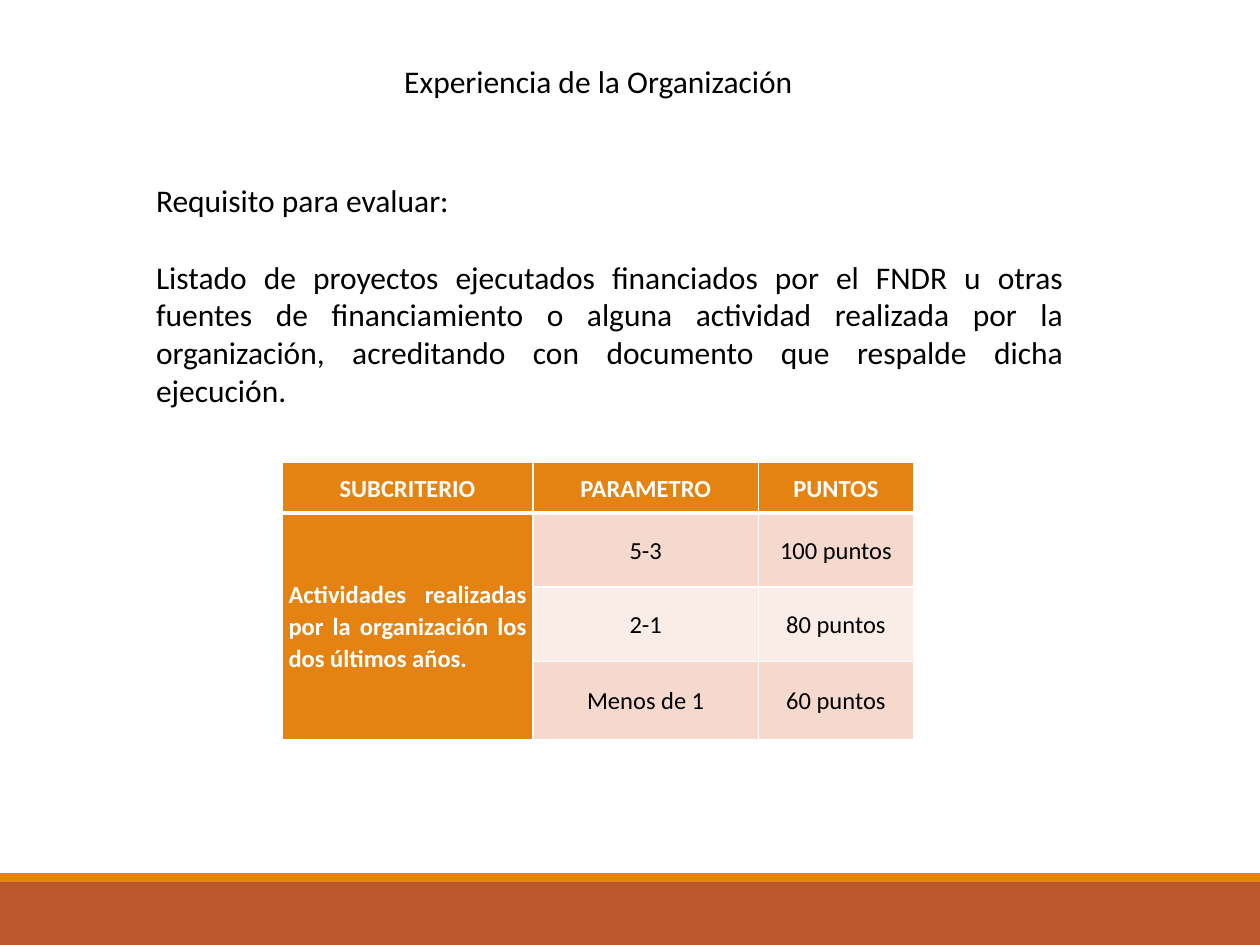
from lxml.etree import SubElement
from pptx import Presentation
from pptx.dml.color import RGBColor
from pptx.enum.shapes import MSO_SHAPE
from pptx.enum.text import MSO_ANCHOR, MSO_AUTO_SIZE, PP_ALIGN
from pptx.oxml.ns import qn
from pptx.util import Inches, Pt

WHITE = RGBColor(0xFF, 0xFF, 0xFF)
BLACK = RGBColor(0x00, 0x00, 0x00)
ORANGE = RGBColor(0xE4, 0x83, 0x12)
RUST = RGBColor(0xBD, 0x58, 0x2C)
PEACH = RGBColor(0xF5, 0xD9, 0xCC)
PALE = RGBColor(0xFA, 0xED, 0xE7)

SLIDE_SIZE = (10, 7.5)
COLUMN_WIDTHS = (1.99, 1.79, 1.23)
ROW_HEIGHTS = (0.4, 0.59, 0.59, 0.62)
BODY_FONT = {"size": Pt(18), "color": BLACK, "bold": False}
HEAD_FONT = {"size": Pt(14), "color": WHITE, "bold": True}
CELL_FONT = {"size": Pt(14), "color": BLACK, "bold": False}
CELL_MARGINS = {
    "margin_left": Inches(0.05), "margin_right": Inches(0.05),
    "margin_top": 0, "margin_bottom": 0,
    "vertical_anchor": MSO_ANCHOR.MIDDLE,
}

REQUIREMENT = (
    "Requisito para evaluar:",
    "Listado de proyectos ejecutados financiados por el FNDR u otras fuentes de "
    "financiamiento o alguna actividad realizada por la organización, acreditando "
    "con documento que respalde dicha ejecución.",
)
SCORES = (
    ("SUBCRITERIO", "PARAMETRO", "PUNTOS"),
    ("Actividades realizadas por la organización los dos últimos años.",
     "5-3", "100 puntos"),
    ("", "2-1", "80 puntos"),
    ("", "Menos de 1", "60 puntos"),
)


def apply_format(target, values):
    for name, value in values.items():
        setattr(target, name, value)


def write_paragraph(para, text, font, layout):
    apply_format(para, layout)
    span = para.add_run()
    span.text = text
    span.font.name = "Calibri"
    span.font.color.rgb = font["color"]
    apply_format(span.font, {key: font[key] for key in ("size", "bold")})


def add_band(page, top, height, color):
    """Add a bar across the full width of the slide."""
    band = page.shapes.add_shape(MSO_SHAPE.RECTANGLE, 0, Inches(top),
                                 Inches(SLIDE_SIZE[0]), Inches(height))
    band.shadow.inherit = False
    band.fill.solid()
    band.fill.fore_color.rgb = color
    band.line.fill.background()


def add_text(page, area, texts, layout, wrap=True):
    box = page.shapes.add_textbox(*map(Inches, area))
    frame = box.text_frame
    apply_format(frame, {"word_wrap": wrap,
                         "auto_size": MSO_AUTO_SIZE.SHAPE_TO_FIT_TEXT})
    for index, text in enumerate(texts):
        para = frame.add_paragraph() if index else frame.paragraphs[0]
        write_paragraph(para, text, BODY_FONT, layout)
        if index < len(texts) - 1:
            para.space_after = Pt(22)


def set_borders(cell, widths):
    """Draw white cell edges; widths maps a side (L, R, T, B) to points."""
    properties = cell._tc.get_or_add_tcPr()
    for index, (side, width) in enumerate(widths.items()):
        line = SubElement(properties, qn(f"a:ln{side}"), w=str(Pt(width)))
        fill = SubElement(line, qn("a:solidFill"))
        SubElement(fill, qn("a:srgbClr"), val=str(WHITE))
        properties.insert(index, line)


def fill_cell(cell, row, column, text):
    heading = row == 0 or column == 0
    apply_format(cell, CELL_MARGINS)
    cell.fill.solid()
    cell.fill.fore_color.rgb = ORANGE if heading else PEACH if row % 2 else PALE
    set_borders(cell, {"L": 1, "R": 1, "T": 3 if row == 1 else 1,
                       "B": 3 if row == 0 else 1})
    if text:
        justified = row > 0 and column == 0
        align = PP_ALIGN.JUSTIFY if justified else PP_ALIGN.CENTER
        write_paragraph(cell.text_frame.paragraphs[0], text,
                        HEAD_FONT if heading else CELL_FONT,
                        {"alignment": align, "line_spacing": 1.07})


def add_score_table(page, left, top):
    size = (sum(COLUMN_WIDTHS), sum(ROW_HEIGHTS))
    table = page.shapes.add_table(len(ROW_HEIGHTS), len(COLUMN_WIDTHS),
                                  *map(Inches, (left, top, *size))).table
    for column, width in zip(table.columns, COLUMN_WIDTHS):
        column.width = Inches(width)
    for row, height in zip(table.rows, ROW_HEIGHTS):
        row.height = Inches(height)
    table.cell(1, 0).merge(table.cell(len(ROW_HEIGHTS) - 1, 0))
    for row, texts in enumerate(SCORES):
        for column, text in enumerate(texts):
            fill_cell(table.cell(row, column), row, column, text)


def main():
    deck = Presentation()
    deck.slide_width, deck.slide_height = map(Inches, SLIDE_SIZE)
    page = deck.slides.add_slide(deck.slide_layouts[6])
    add_band(page, 7, 0.5, RUST)
    add_band(page, 6.93, 0.07, ORANGE)
    add_text(page, (3.11, 0.44, 3.32, 0.4), ["Experiencia de la Organización"],
             {"alignment": PP_ALIGN.LEFT}, wrap=False)
    add_text(page, (1.14, 1.39, 7.4, 1.92), REQUIREMENT,
             {"alignment": PP_ALIGN.JUSTIFY})
    add_score_table(page, 2.24, 3.67)
    deck.save("out.pptx")


if __name__ == "__main__":
    main()
